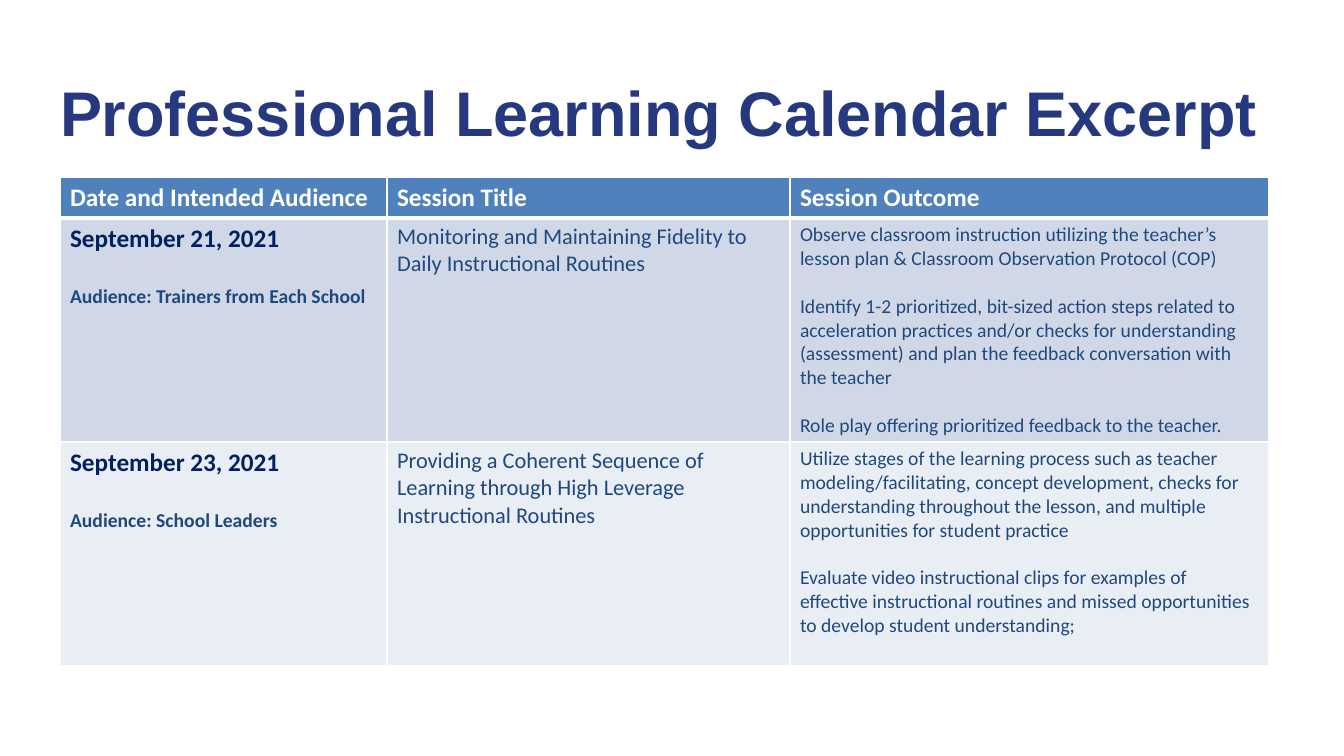
from lxml.etree import SubElement
from pptx import Presentation
from pptx.dml.color import RGBColor
from pptx.enum.text import MSO_ANCHOR
from pptx.oxml.ns import qn
from pptx.util import Pt

THEME = {
    "title": ("Arial", 45, "27397E", True),
    "header": ("Calibri", 18, "FFFFFF", True),
    "date": ("Calibri", 18, "002060", True),
    "audience": ("Calibri", 14, "1F497D", True),
    "session": ("Calibri", 16, "1F497D", False),
    "outcome": ("Calibri", 14, "1F497D", False),
    "fills": ["4F81BD", "D0D8E8", "E9EDF4"],
    "border": "FFFFFF",
    "audience_gap": 22,
    "outcome_gap": 17,
}


def px(length):
    return round(length * 12192000 / 1344)


def write(frame, lines, gap=0):
    for index, (style, text) in enumerate(lines):
        paragraph = frame.add_paragraph() if index else frame.paragraphs[0]
        paragraph.space_before = Pt(gap if index else 0)
        run = paragraph.add_run()
        run.text = text
        family, size, color, bold = THEME[style]
        run.font.name = family
        run.font.size = Pt(size)
        run.font.bold = bold
        run.font.color.rgb = RGBColor.from_string(color)


headings = ["Date and Intended Audience", "Session Title", "Session Outcome"]
sessions = [
    (
        "September 21, 2021",
        "Audience: Trainers from Each School",
        "Monitoring and Maintaining Fidelity to Daily Instructional Routines",
        [
            "Observe classroom instruction utilizing the teacher’s lesson plan "
            "& Classroom Observation Protocol (COP)",
            "Identify 1-2 prioritized, bit-sized action steps related to "
            "acceleration practices and/or checks for understanding (assessment) "
            "and plan the feedback conversation with the teacher",
            "Role play offering prioritized feedback to the teacher.",
        ],
    ),
    (
        "September 23, 2021",
        "Audience: School Leaders",
        "Providing a Coherent Sequence of Learning through High Leverage "
        "Instructional Routines",
        [
            "Utilize stages of the learning process such as teacher "
            "modeling/facilitating, concept development, checks for understanding "
            "throughout the lesson, and multiple opportunities for student practice",
            "Evaluate video instructional clips for examples of effective "
            "instructional routines and missed opportunities to develop student "
            "understanding;",
        ],
    ),
]
column_widths = [327, 403, 479]
row_heights = [41, 224, 224]
left, table_width = 60, sum(column_widths)

deck = Presentation()
deck.slide_width, deck.slide_height = px(1344), px(756)
slide = deck.slides.add_slide(deck.slide_layouts[6])

title = slide.shapes.add_textbox(px(left), px(74), px(table_width), px(72)).text_frame
title.word_wrap = True
title.vertical_anchor = MSO_ANCHOR.TOP
title.margin_left = title.margin_right = title.margin_top = title.margin_bottom = 0
write(title, [("title", "Professional Learning Calendar Excerpt")])

calendar = slide.shapes.add_table(
    len(row_heights), len(column_widths),
    px(left), px(177), px(table_width), px(sum(row_heights)),
).table
for column, width in zip(calendar.columns, column_widths):
    column.width = px(width)
for row, height in zip(calendar.rows, row_heights):
    row.height = px(height)

for row_index, fill in enumerate(THEME["fills"]):
    for cell in calendar.rows[row_index].cells:
        properties = cell._tc.get_or_add_tcPr()
        for side in ("L", "R", "T", "B"):
            under_header = (row_index, side) in [(0, "B"), (1, "T")]
            border = SubElement(properties, qn(f"a:ln{side}"), w=str(Pt(3 if under_header else 1)))
            paint = SubElement(border, qn("a:solidFill"))
            SubElement(paint, qn("a:srgbClr"), val=THEME["border"])
        cell.fill.solid()
        cell.fill.fore_color.rgb = RGBColor.from_string(fill)

for column_index, heading in enumerate(headings):
    write(calendar.cell(0, column_index).text_frame, [("header", heading)])

for row_index, (date, audience, session, outcomes) in enumerate(sessions, 1):
    date_cell, session_cell, outcome_cell = calendar.rows[row_index].cells
    write(date_cell.text_frame, [("date", date), ("audience", audience)], THEME["audience_gap"])
    write(session_cell.text_frame, [("session", session)])
    write(
        outcome_cell.text_frame,
        [("outcome", outcome) for outcome in outcomes],
        THEME["outcome_gap"],
    )

deck.save("out.pptx")
